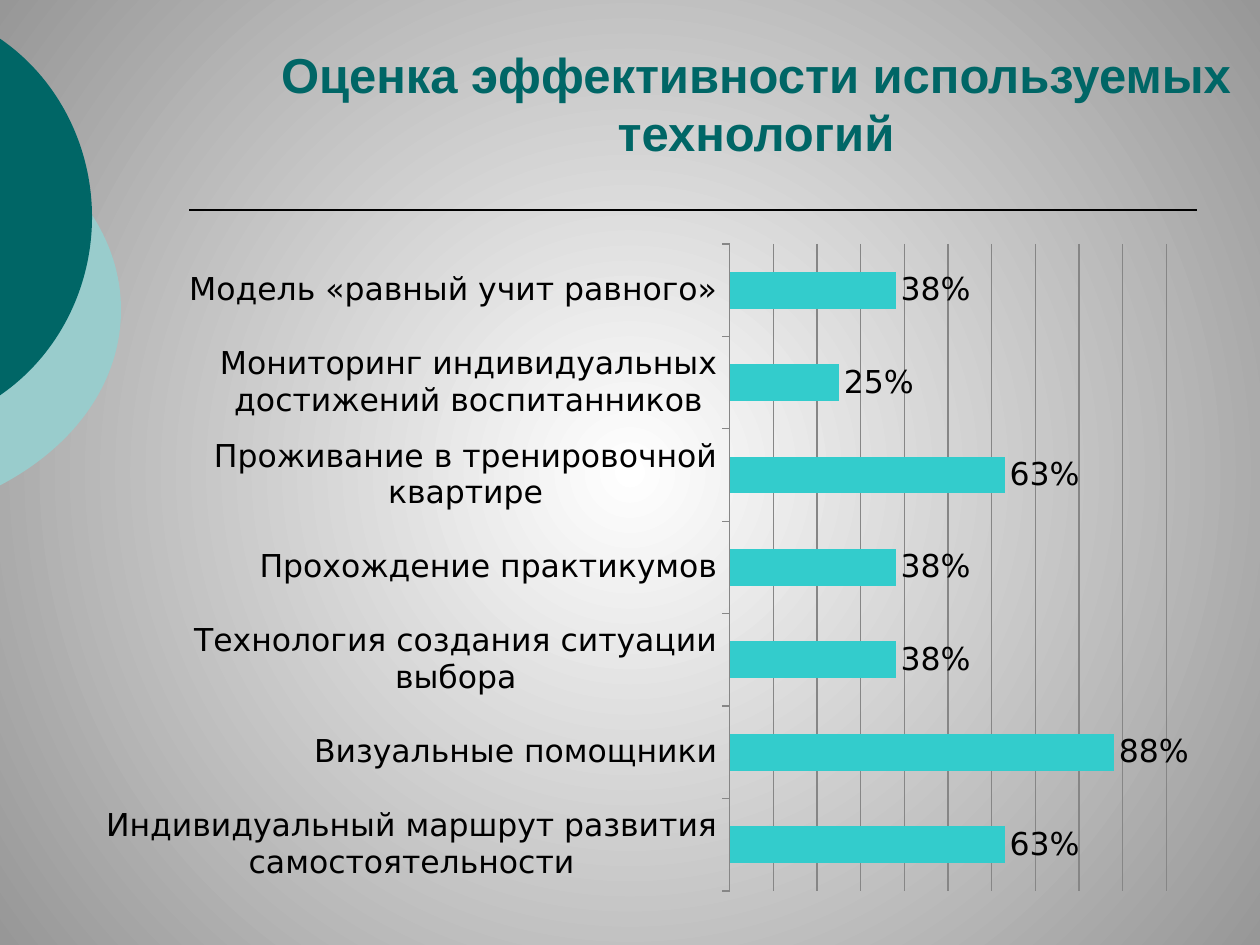
import pptx
import pptx.chart.data
import pptx.dml.color
import pptx.enum.chart
import pptx.enum.shapes
import pptx.enum.text
import pptx.oxml
import pptx.oxml.ns
import pptx.util

RGBColor = pptx.dml.color.RGBColor
WHITE = RGBColor(0xFF, 0xFF, 0xFF)
GREY = RGBColor(0x97, 0x97, 0x97)
BLACK = RGBColor(0, 0, 0)
TEAL = RGBColor(0x00, 0x66, 0x66)
PALE_TEAL = RGBColor(0x99, 0xCC, 0xCC)
TURQUOISE = RGBColor(0x33, 0xCC, 0xCC)
GRID_GREY = RGBColor(0x86, 0x86, 0x86)

PX_PER_INCH = 126

RATINGS = [
    ("Индивидуальный маршрут развития самостоятельности", 0.63),
    ("Визуальные помощники", 0.88),
    ("Технология создания ситуации выбора", 0.38),
    ("Прохождение практикумов", 0.38),
    ("Проживание в тренировочной квартире", 0.63),
    ("Мониторинг индивидуальных достижений воспитанников", 0.25),
    ("Модель «равный учит равного»", 0.38),
]


def px(length):
    return pptx.util.Emu(round(length * 914400 / PX_PER_INCH))


def paint_background(page):
    """Radial gradient, white in the centre."""
    fill = page.background.fill
    fill.gradient()
    for stop, colour in zip(fill.gradient_stops, (WHITE, GREY)):
        stop.color.rgb = colour
    linear = page.element.find(".//" + pptx.oxml.ns.qn("a:lin"))
    radial = pptx.oxml.parse_xml(
        f'<a:path {pptx.oxml.ns.nsdecls("a")} path="circle">'
        '<a:fillToRect l="50000" t="50000" r="50000" b="50000"/></a:path>')
    linear.getparent().replace(linear, radial)


def add_cut_disc(page, left, top, width, height, upper_arc, colour):
    """A disc cut off at the page's left edge.

    upper_arc holds the four Bezier points of the upper half, relative to
    the box; the lower half mirrors it about the last point.
    """
    builder = page.shapes.build_freeform(px(left), px(top))
    builder.add_line_segments([(px(left + width), px(top)),
                               (px(left + width), px(top + height))])
    shape = builder.convert_to_shape()

    # Curved outline in place of the straight one
    middle = upper_arc[-1][1]
    lower_arc = [(x, 2 * middle - y) for x, y in reversed(upper_arc)]
    start, *upper = [f'<a:pt x="{x}" y="{y}"/>' for x, y in upper_arc]
    lower = [f'<a:pt x="{x}" y="{y}"/>' for x, y in lower_arc[1:]]
    curves = "".join(f'<a:cubicBezTo>{"".join(arc)}</a:cubicBezTo>'
                     for arc in (upper, lower))
    outline = shape.element.find(".//" + pptx.oxml.ns.qn("a:pathLst"))
    outline.getparent().replace(outline, pptx.oxml.parse_xml(
        f'<a:pathLst {pptx.oxml.ns.nsdecls("a")}><a:path w="{width}" h="{height}">'
        f'<a:moveTo>{start}</a:moveTo>{curves}<a:close/></a:path></a:pathLst>'))

    shape.shadow.inherit = False
    shape.fill.solid()
    shape.fill.fore_color.rgb = colour
    shape.line.fill.background()


def add_rule(page, left, top, width):
    rule = page.shapes.add_connector(
        pptx.enum.shapes.MSO_CONNECTOR.STRAIGHT,
        px(left), px(top), px(left + width), px(top))
    rule.line.color.rgb = BLACK
    rule.line.width = pptx.util.Pt(1)
    rule.element.spPr.append(
        pptx.oxml.parse_xml(f'<a:effectLst {pptx.oxml.ns.nsdecls("a")}/>'))


def add_title(page, left, top, width, height):
    box = page.shapes.add_textbox(px(left), px(top), px(width), px(height))
    frame = box.text_frame
    frame.word_wrap = True
    frame.vertical_anchor = pptx.enum.text.MSO_ANCHOR.BOTTOM
    para = frame.paragraphs[0]
    para.alignment = pptx.enum.text.PP_ALIGN.CENTER
    span = para.add_run()
    span.text = "Оценка эффективности используемых технологий"
    span.font.name = "Arial"
    span.font.size = pptx.util.Pt(28)
    span.font.bold = True
    span.font.color.rgb = TEAL


def set_plot_area(chart, left, top, width, height):
    """Fix the inner plot area, as fractions of the chart."""
    plot_area = chart.element.find(".//" + pptx.oxml.ns.qn("c:plotArea"))
    for old in plot_area.findall(pptx.oxml.ns.qn("c:layout")):
        plot_area.remove(old)
    plot_area.insert(0, pptx.oxml.parse_xml(
        f'<c:layout {pptx.oxml.ns.nsdecls("c")}><c:manualLayout>'
        '<c:layoutTarget val="inner"/><c:xMode val="edge"/><c:yMode val="edge"/>'
        f'<c:x val="{left}"/><c:y val="{top}"/>'
        f'<c:w val="{width}"/><c:h val="{height}"/></c:manualLayout></c:layout>'))


def add_ratings_chart(page, left, top, width, height):
    data = pptx.chart.data.CategoryChartData(number_format="0%")
    data.categories = [name for name, share in RATINGS]
    data.add_series("Series 1", [share for name, share in RATINGS])
    chart = page.shapes.add_chart(
        pptx.enum.chart.XL_CHART_TYPE.BAR_CLUSTERED,
        px(left), px(top), px(width), px(height), data).chart
    chart.has_legend = False
    chart.has_title = False
    chart.font.name = "DejaVu Sans"
    chart.font.size = pptx.util.Pt(18)
    chart.font.color.rgb = BLACK
    set_plot_area(chart, 646 / width, 13 / height, 437 / width, 647 / height)

    # Axes
    names = chart.category_axis
    names.major_tick_mark = pptx.enum.chart.XL_TICK_MARK.OUTSIDE
    names.has_major_gridlines = False
    shares = chart.value_axis
    shares.visible = False
    shares.minimum_scale, shares.maximum_scale, shares.major_unit = 0, 1, 0.1
    shares.has_major_gridlines = True
    for line in (names.format.line, shares.major_gridlines.format.line):
        line.color.rgb = GRID_GREY
        line.width = pptx.util.Pt(0.75)

    # Bars and their labels
    plot = chart.plots[0]
    plot.gap_width = 150
    plot.vary_by_categories = False
    bars = plot.series[0].format.fill
    bars.solid()
    bars.fore_color.rgb = TURQUOISE
    plot.has_data_labels = True
    labels = plot.data_labels
    labels.show_value = True
    labels.number_format = "0%"
    labels.number_format_is_linked = False
    labels.position = pptx.enum.chart.XL_LABEL_POSITION.OUTSIDE_END


def main():
    deck = pptx.Presentation()
    deck.slide_width, deck.slide_height = px(1260), px(945)
    page = deck.slides.add_slide(deck.slide_layouts[6])
    paint_background(page)
    add_cut_disc(page, -446, 94, 567, 431,
                 [(445, 40), (522, 80), (567, 145), (567, 216)], PALE_TEAL)
    add_cut_disc(page, -334, 0, 426, 435,
                 [(333, 38), (392, 78), (426, 146), (426, 217)], TEAL)
    add_rule(page, 189, 210, 1008)
    add_title(page, 252, 42, 1008, 126)
    add_ratings_chart(page, 84, 231, 1105, 674)
    deck.save("out.pptx")


if __name__ == "__main__":
    main()
